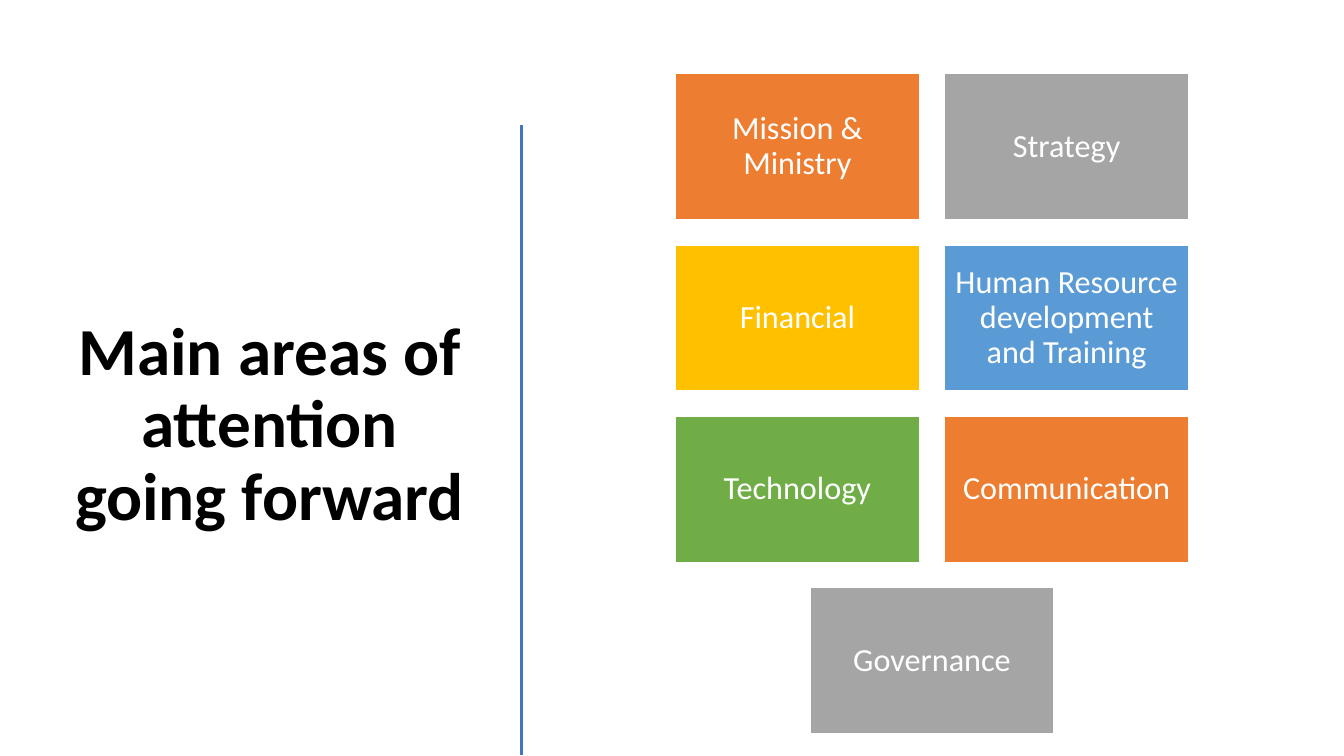
from lxml import etree
from pptx import Presentation
from pptx.dml.color import RGBColor
from pptx.enum.shapes import MSO_CONNECTOR, MSO_SHAPE
from pptx.enum.text import MSO_ANCHOR, PP_ALIGN
from pptx.oxml.ns import qn
from pptx.util import Pt

PX = 9144
RECT = MSO_SHAPE.RECTANGLE
STRAIGHT = MSO_CONNECTOR.STRAIGHT
MIDDLE = MSO_ANCHOR.MIDDLE
CENTER = PP_ALIGN.CENTER

BLACK = RGBColor(0x00, 0x00, 0x00)
WHITE = RGBColor(0xFF, 0xFF, 0xFF)
BLUE = RGBColor(0x44, 0x72, 0xC4)
ORANGE = RGBColor(0xED, 0x7D, 0x31)
GRAY = RGBColor(0xA5, 0xA5, 0xA5)
GOLD = RGBColor(0xFF, 0xC0, 0x00)
SKY = RGBColor(0x5B, 0x9B, 0xD5)
GREEN = RGBColor(0x70, 0xAD, 0x47)

TITLE_FONT = {"name": "Calibri", "size": Pt(48), "bold": True}
TILE_FONT = {"name": "Calibri", "size": Pt(23), "bold": False}

AREAS = [
    ("Mission & Ministry", ORANGE),
    ("Strategy", GRAY),
    ("Financial", GOLD),
    ("Human Resource development and Training", SKY),
    ("Technology", GREEN),
    ("Communication", ORANGE),
    ("Governance", GRAY),
]
COLUMNS = 2
GRID_LEFT, GRID_TOP = 670, 73
TILE_W, TILE_H = 242, 145
PITCH_X, PITCH_Y = 267, 170


def px(*values):
    return [round(v * PX) for v in values]


def set_attrs(target, values):
    for name, value in values.items():
        setattr(target, name, value)


def write_text(sp, text, font, color, inset):
    tf = sp.text_frame
    margins = dict.fromkeys(("margin_left", "margin_right", "margin_top", "margin_bottom"), inset * PX)
    set_attrs(tf, {"word_wrap": True, "vertical_anchor": MIDDLE, **margins})
    p = tf.paragraphs[0]
    set_attrs(p, {"alignment": CENTER, "line_spacing": 0.9})
    r = p.add_run()
    r.text = text
    set_attrs(r.font, font)
    r.font.color.rgb = color


def add_title(s, box, text):
    sp = s.shapes.add_textbox(*px(*box))
    write_text(sp, text, TITLE_FONT, BLACK, 10)


def add_divider(s, x, top, bottom):
    line = s.shapes.add_connector(STRAIGHT, *px(x, top, x, bottom))
    line.line.color.rgb = BLUE
    line.line.width = Pt(2)
    etree.SubElement(line._element.spPr, qn("a:effectLst"))


def add_tile(s, left, top, text, color):
    sp = s.shapes.add_shape(RECT, *px(left, top, TILE_W, TILE_H))
    sp.shadow.inherit = False
    sp.fill.solid()
    sp.fill.fore_color.rgb = color
    sp.line.color.rgb = WHITE
    sp.line.width = Pt(1)
    write_text(sp, text, TILE_FONT, WHITE, 9)


def add_tile_grid(s):
    for i, (text, color) in enumerate(AREAS):
        row, col = divmod(i, COLUMNS)
        in_row = min(COLUMNS, len(AREAS) - row * COLUMNS)
        left = GRID_LEFT + PITCH_X * (col + (COLUMNS - in_row) / 2)
        add_tile(s, left, GRID_TOP + PITCH_Y * row, text, color)


def main():
    prs = Presentation()
    prs.slide_width, prs.slide_height = px(1333, 750)
    s = prs.slides.add_slide(prs.slide_layouts[6])
    add_title(s, (52, 117, 431, 611), "Main areas of attention going forward")
    add_divider(s, 517, 124, 749)
    add_tile_grid(s)
    prs.save("out.pptx")


if __name__ == "__main__":
    main()
